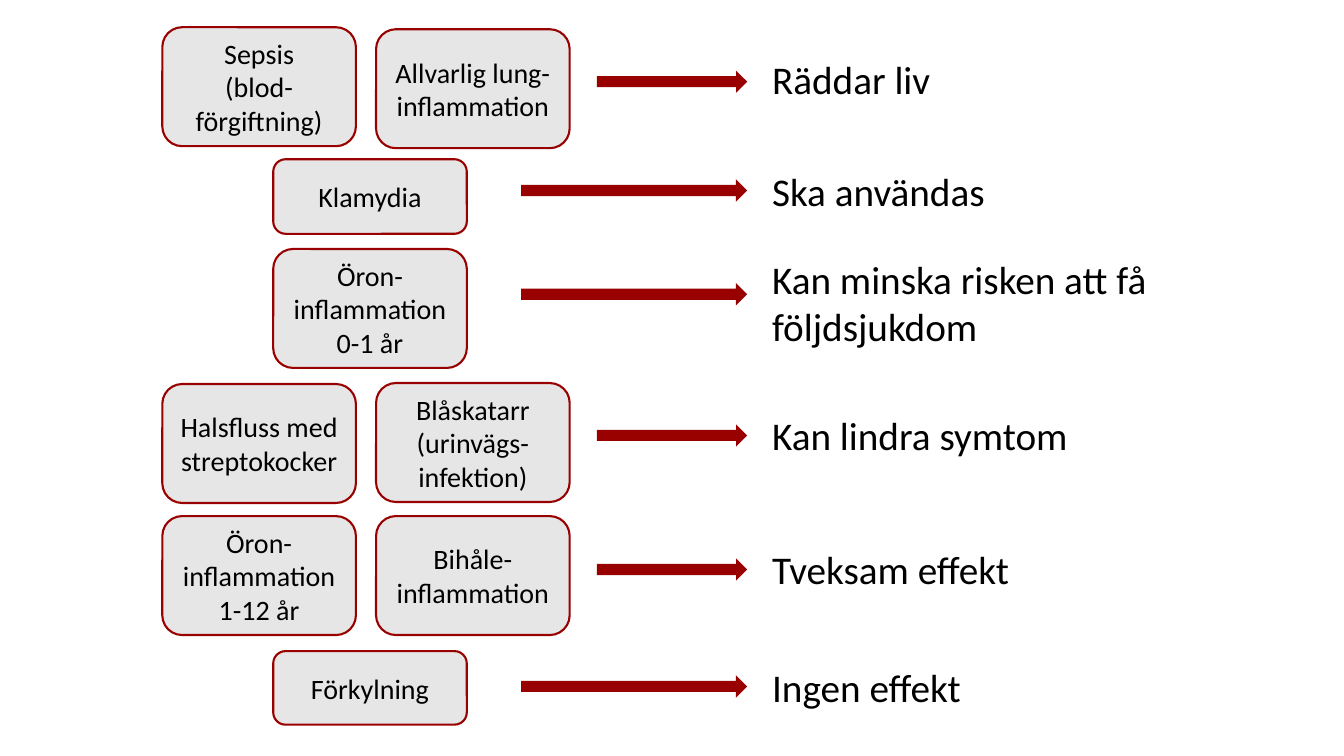
from pptx import Presentation
from pptx.dml.color import RGBColor
from pptx.enum.shapes import MSO_SHAPE
from pptx.enum.text import MSO_ANCHOR, PP_ALIGN
from pptx.util import Inches, Pt

ROUNDED = MSO_SHAPE.ROUNDED_RECTANGLE
ARROW = MSO_SHAPE.RIGHT_ARROW
MIDDLE = MSO_ANCHOR.MIDDLE
CENTER = PP_ALIGN.CENTER
LEFT = PP_ALIGN.LEFT

COLORS = {"red": "990000", "grey": "E6E6E6", "text": "000000"}
FONT = "Calibri"
BOX_WIDTH = 1.92
PAIR_LEFTS = (1.61, 3.73)
SINGLE_LEFTS = (2.71,)
ARROW_RIGHT = 7.41
ARROW_HEIGHT = 0.22
EFFECT_LEFT = 7.56
EFFECT_WIDTH = 4.9

# Each row: conditions with their tops, box height, arrow top, effect, effect top and height
ROWS = [
    ([("Sepsis\v(blod-\vförgiftning)", 0.27), ("Allvarlig lung-inflammation", 0.29)],
     1.18, 0.7, "Räddar liv", 0.5, 0.57),
    ([("Klamydia", 1.58)], 0.74, 1.78, "Ska användas", 1.61, 0.57),
    ([("Öron-inflammation 0-1 år", 2.47)],
     1.18, 2.81, "Kan minska risken att få följdsjukdom", 2.48, 1.04),
    ([("Halsfluss med\vstreptokocker", 3.81), ("Blåskatarr\v(urinvägs-\vinfektion)", 3.8)],
     1.18, 4.21, "Kan lindra symtom", 4.03, 0.57),
    ([("Öron-inflammation 1-12 år", 5.12), ("Bihåle-\vinflammation", 5.12)],
     1.18, 5.54, "Tveksam effekt", 5.36, 0.57),
    ([("Förkylning", 6.46)], 0.73, 6.7, "Ingen effekt", 6.53, 0.57),
]


def color(name):
    """Return the named colour."""
    return RGBColor.from_string(COLORS[name])


def write(shape, text, size, alignment):
    """Put formatted text into a shape."""
    frame = shape.text_frame
    frame.word_wrap = True
    frame.text = text
    para = frame.paragraphs[0]
    para.alignment = alignment
    for span in para.runs:
        span.font.name = FONT
        span.font.size = Pt(size)
        span.font.color.rgb = color("text")


def add_condition(page, text, left, top, height):
    """Add one rounded box naming a condition."""
    box = page.shapes.add_shape(
        ROUNDED, Inches(left), Inches(top), Inches(BOX_WIDTH), Inches(height))
    box.shadow.inherit = False
    box.fill.solid()
    box.fill.fore_color.rgb = color("grey")
    box.line.color.rgb = color("red")
    box.line.width = Pt(1.5)
    write(box, text, 20, CENTER)
    box.text_frame.vertical_anchor = MIDDLE


def add_arrow(page, left, top):
    """Add a red arrow ending at the shared right edge."""
    arrow = page.shapes.add_shape(
        ARROW, Inches(left), Inches(top), Inches(ARROW_RIGHT - left), Inches(ARROW_HEIGHT))
    arrow.shadow.inherit = False
    arrow.fill.solid()
    arrow.fill.fore_color.rgb = color("red")
    arrow.line.fill.background()


def add_effect(page, text, top, height):
    """Add the treatment effect to the right of an arrow."""
    box = page.shapes.add_textbox(
        Inches(EFFECT_LEFT), Inches(top), Inches(EFFECT_WIDTH), Inches(height))
    write(box, text, 28, LEFT)


def add_row(page, conditions, height, arrow_top, effect, effect_top, effect_height):
    """Add the conditions, arrow and effect of one row."""
    paired = len(conditions) == 2
    lefts = PAIR_LEFTS if paired else SINGLE_LEFTS
    for left, (text, top) in zip(lefts, conditions):
        add_condition(page, text, left, top, height)
    add_arrow(page, 5.92 if paired else 5.17, arrow_top)
    add_effect(page, effect, effect_top, effect_height)


def main():
    """Build and save the slide."""
    deck = Presentation()
    deck.slide_width = Inches(13.33)
    deck.slide_height = Inches(7.5)
    page = deck.slides.add_slide(deck.slide_layouts[6])
    for row in ROWS:
        add_row(page, *row)
    deck.save("out.pptx")


if __name__ == "__main__":
    main()
